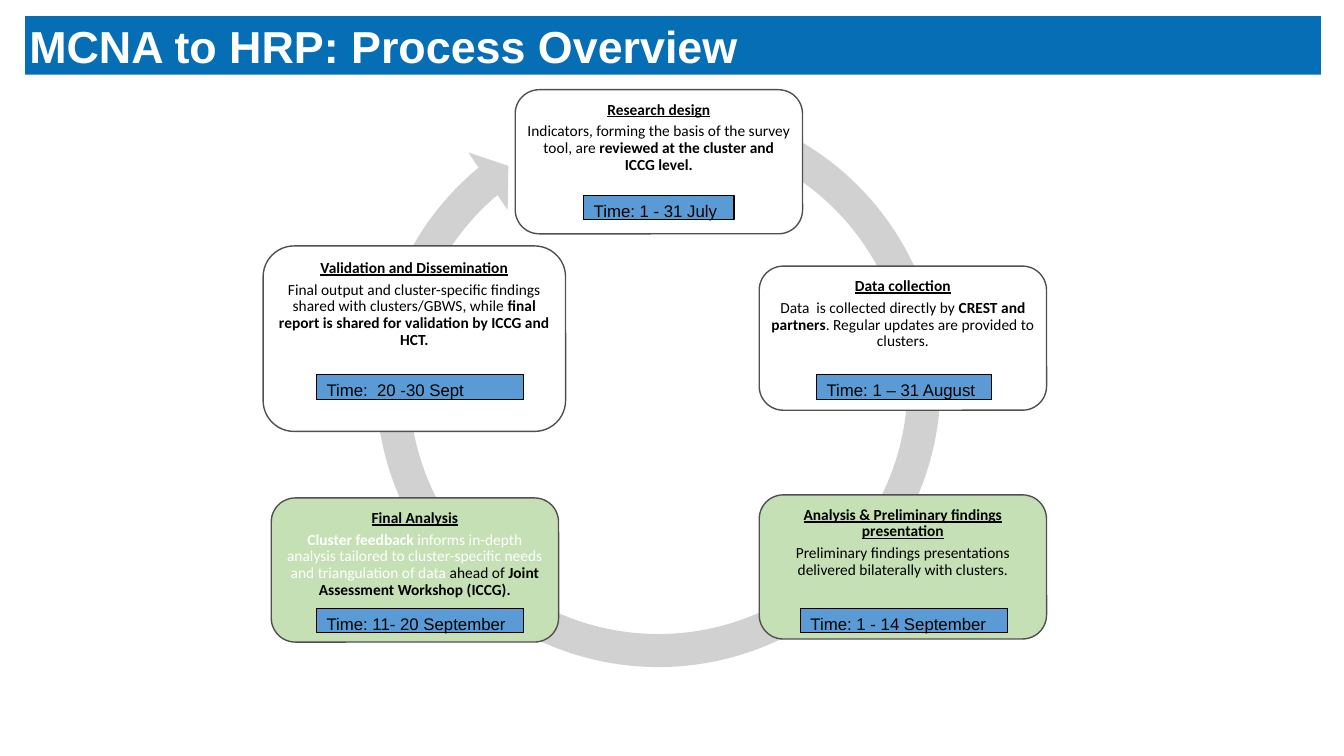
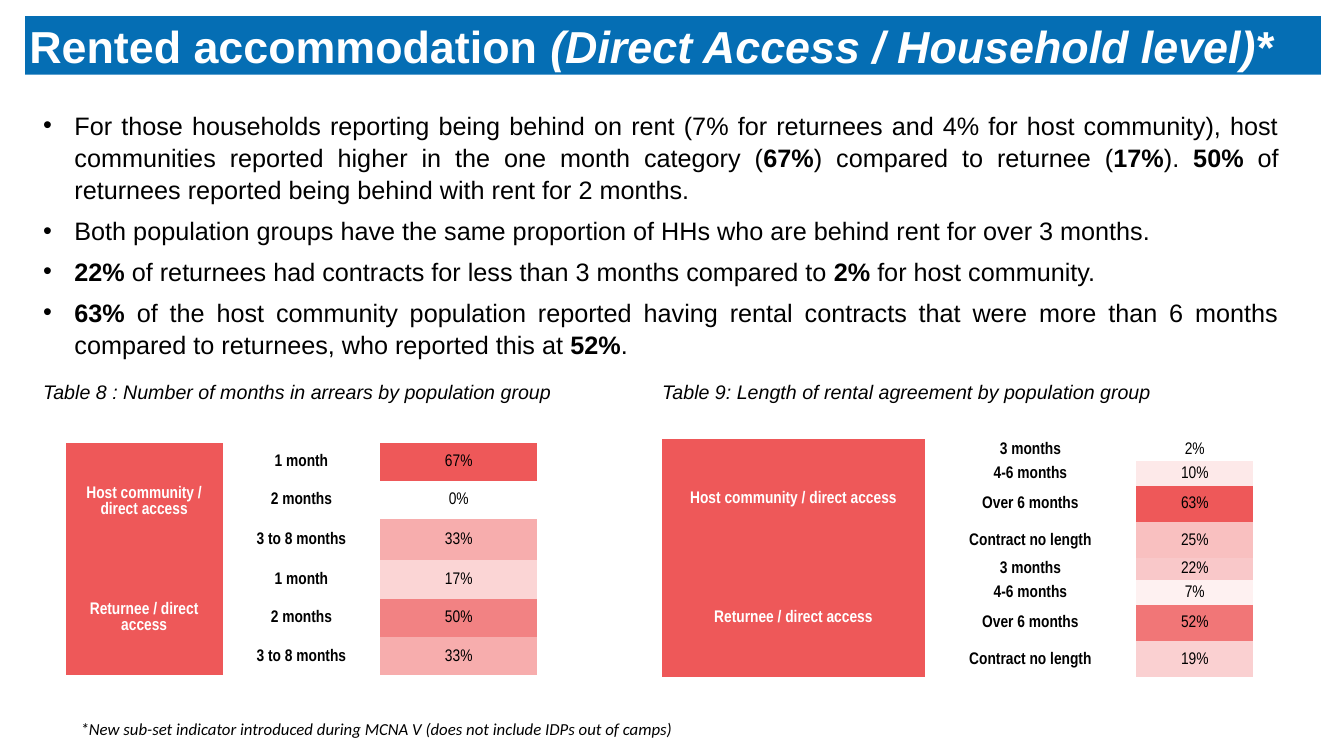
from dataclasses import dataclass

from lxml.etree import SubElement
from pptx import Presentation
from pptx.dml.color import RGBColor
from pptx.enum.shapes import MSO_SHAPE
from pptx.enum.text import MSO_ANCHOR, PP_ALIGN
from pptx.oxml.ns import qn
from pptx.util import Emu, Inches, Pt


@dataclass(frozen=True)
class Theme:
    blue: str = "056EB4"
    time_blue: str = "5B9BD5"
    ring: str = "D1D1D2"
    outline: str = "505052"
    green: str = "C5E0B4"
    red: str = "EE5859"
    white: str = "FFFFFF"
    black: str = "000000"
    sans: str = "Arial"
    narrow: str = "Arial Narrow"
    body: str = "Calibri"
    title_pt: int = 32
    bullet_pt: int = 18
    caption_pt: int = 14
    small_pt: int = 12
    step_pt: int = 11


T = Theme()
WIDTH, HEIGHT = 13.33, 7.5
NO_STYLE_NO_GRID = "{2D5ABB26-0587-4C30-8999-92F81FD0307C}"

# Runs are (text, flags): b bold, i italic, u underlined, w white.
PROCESS_TITLE = [("MCNA to HRP: Process Overview", "b")]
RING = (3.55, 0.84, 5.96, 5.96)
RING_ADJUSTMENTS = (0.055, 3.307, 138.065, 173.674, 0.058)
STEP_SIZE = (2.85, 1.43)
LARGE_STEP_SIZE = (3, 1.84)
TIME_HEIGHT = 0.24
STEPS = [
    dict(heading="Research design", at=(5.11, 0.89), size=STEP_SIZE, fill=T.white,
         text=[("Indicators, forming the basis of the survey tool, are ", ""),
               ("reviewed at the cluster and ICCG level.", "b")],
         time="Time: 1 - 31 July", time_box=(5.79, 1.94, 1.49)),
    dict(heading="Data collection", at=(7.53, 2.64), size=STEP_SIZE, fill=T.white,
         text=[("Data  is collected directly by ", ""), ("CREST and partners", "b"),
               (". Regular updates are provided to clusters.", "")],
         time="Time: 1 – 31 August", time_box=(8.1, 3.72, 1.73)),
    dict(heading="Analysis & Preliminary findings presentation", at=(7.53, 4.91),
         size=STEP_SIZE, fill=T.green,
         text=[("Preliminary findings presentations delivered bilaterally with clusters.", "")],
         time="Time: 1 - 14 September", time_box=(7.94, 6.04, 2.05)),
    dict(heading="Final Analysis", at=(2.69, 4.94), size=STEP_SIZE, fill=T.green,
         text=[("Cluster feedback ", "bw"),
               ("informs in-depth analysis tailored to cluster-specific needs "
                "and triangulation of data ", "w"),
               ("ahead of ", ""), ("Joint Assessment Workshop (ICCG).", "b")],
         time="Time: 11- 20 September", time_box=(3.14, 6.04, 2.05)),
    dict(heading="Validation and Dissemination", at=(2.61, 2.44),
         size=LARGE_STEP_SIZE, fill=T.white,
         text=[("Final output and cluster-specific findings shared with clusters/GBWS, while", ""),
               (" final report is shared for validation by ICCG and HCT.", "b")],
         time="Time:  20 -30 Sept", time_box=(3.14, 3.72, 2.05)),
]

RENT_TITLE = [("Rented accommodation ", "b"), ("(Direct Access / Household level)*", "bi")]
RENT_BULLETS = [
    [("For those households reporting being behind on rent (7% for returnees and 4% for host "
      "community), host communities reported higher in the one month category (", ""),
     ("67%", "b"), (") compared to returnee (", ""), ("17%", "b"), ("). ", ""), ("50%", "b"),
     (" of returnees reported being behind with rent for 2 months.", "")],
    [("Both population groups have the same proportion of HHs who are behind rent "
      "for over 3 months.", "")],
    [("22%", "b"), (" of returnees had contracts for less than 3 months compared to ", ""),
     ("2%", "b"), (" for host community.", "")],
    [("63%", "b"),
     (" of the host community population reported having rental contracts that were more than "
      "6 months compared to returnees, who reported this at ", ""),
     ("52%", "b"), (".", "")],
]
HOST, RETURNEE = "Host community / direct access", "Returnee / direct access"
RENT_TABLES = [
    dict(caption="Table 8 : Number of months in arrears by population group",
         caption_left=0.33, at=(0.65, 4.39), cols=(1.56, 1.56, 1.56), rows=(0.38, 0.38, 0.38),
         labels=("1 month", "2 months", "3 to 8 months"),
         groups={HOST: (67, 0, 33), RETURNEE: (17, 50, 33)}),
    dict(caption="Table 9: Length of rental agreement by population group",
         caption_left=6.47, at=(6.57, 4.36), cols=(2.6, 2.1, 1.16),
         rows=(0.18, 0.25, 0.36, 0.36),
         labels=("3 months", "4-6 months", "Over 6 months", "Contract no length"),
         groups={HOST: (2, 10, 63, 25), RETURNEE: (22, 7, 52, 19)}),
]
FOOTNOTE = "*New sub-set indicator introduced during MCNA V (does not include IDPs out of camps)"


def write(tf, paragraphs, *, size, font=T.sans, color=T.black, align=PP_ALIGN.LEFT,
          line=None, before=None, after=None, indent=None, bullet=None):
    """Fill a text frame; each paragraph is a list of (text, flags) runs."""
    for n, runs in enumerate(paragraphs):
        p = tf.add_paragraph() if n else tf.paragraphs[0]
        p.alignment, p.line_spacing = align, line
        p.space_before = None if before is None else Pt(before)
        p.space_after = None if after is None else Pt(after)
        pPr = p._p.get_or_add_pPr()
        if indent:
            margin, first = indent
            pPr.set("marL", str(Inches(margin)))
            pPr.set("indent", str(Inches(first)))
        if bullet:
            SubElement(pPr, qn("a:buFont"), typeface=T.sans)
            SubElement(pPr, qn("a:buChar"), char=bullet)
        for text, flags in runs:
            r = p.add_run()
            r.text = text
            r.font.name, r.font.size = font, Pt(size)
            r.font.bold, r.font.italic = "b" in flags, "i" in flags
            r.font.underline = "u" in flags
            r.font.color.rgb = RGBColor.from_string(T.white if "w" in flags else color)


def set_insets(box, left, top, right, bottom):
    box.margin_left, box.margin_top = Inches(left), Inches(top)
    box.margin_right, box.margin_bottom = Inches(right), Inches(bottom)


def add_shape(slide, kind, at, fill, line=None, line_pt=1):
    sp = slide.shapes.add_shape(kind, *map(Inches, at))
    sp.shadow.inherit = False
    sp.fill.solid()
    sp.fill.fore_color.rgb = RGBColor.from_string(fill)
    if line:
        sp.line.color.rgb = RGBColor.from_string(line)
        sp.line.width = Pt(line_pt)
    else:
        sp.line.fill.background()
    sp.text_frame.vertical_anchor = MSO_ANCHOR.TOP
    return sp


def add_text(slide, at, paragraphs, **fmt):
    tf = slide.shapes.add_textbox(*map(Inches, at)).text_frame
    tf.word_wrap = True
    write(tf, paragraphs, **fmt)


def add_titled_slide(prs, title):
    slide = prs.slides.add_slide(prs.slide_layouts[6])
    tf = add_shape(slide, MSO_SHAPE.RECTANGLE, (0.25, 0.16, 12.85, 0.58), T.blue).text_frame
    tf.word_wrap = False
    tf.vertical_anchor = MSO_ANCHOR.MIDDLE
    set_insets(tf, 0, 0, 0, 0)
    write(tf, [title], size=T.title_pt, color=T.white, before=8, indent=(0.42, -0.38))
    return slide


def add_step(slide, step):
    card = add_shape(slide, MSO_SHAPE.ROUNDED_RECTANGLE, step["at"] + step["size"],
                     step["fill"], T.outline)
    set_insets(card.text_frame, 0.05, 0.05, 0.05, 0.05)
    write(card.text_frame, [[(step["heading"], "bu")], step["text"]], size=T.step_pt,
          font=T.body, align=PP_ALIGN.CENTER, line=0.9, after=0.35 * T.step_pt)
    time = add_shape(slide, MSO_SHAPE.RECTANGLE, step["time_box"] + (TIME_HEIGHT,),
                     T.time_blue, T.black, 0.75)
    write(time.text_frame, [[(step["time"], "")]], size=T.small_pt)


def heat(value, low, high):
    """Shade from white at the lowest value to red at the highest."""
    share = (value - low) / (high - low)
    return "".join(f"{round(255 - share * (255 - c)):02X}" for c in bytes.fromhex(T.red))


def fill_cell(cell, text, flags="", fill=None):
    cell.vertical_anchor = MSO_ANCHOR.MIDDLE
    set_insets(cell, 0.01, 0.01, 0.01, 0)
    if fill:
        cell.fill.solid()
        cell.fill.fore_color.rgb = RGBColor.from_string(fill)
    else:
        cell.fill.background()
    write(cell.text_frame, [[(text, flags)]], size=T.small_pt, font=T.narrow,
          align=PP_ALIGN.CENTER)


def add_heat_table(slide, spec_):
    labels, groups = spec_["labels"], spec_["groups"]
    heights = spec_["rows"] * len(groups)
    size = sum(spec_["cols"]), sum(heights)
    table = slide.shapes.add_table(len(heights), len(spec_["cols"]),
                                   *map(Inches, spec_["at"] + size)).table
    table.first_row = table.horz_banding = False
    table._tbl.tblPr.find(qn("a:tableStyleId")).text = NO_STYLE_NO_GRID
    for col, width in zip(table.columns, spec_["cols"]):
        col.width = Inches(width)
    for row, height in zip(table.rows, heights):
        row.height = Inches(height)

    values = [v for group in groups.values() for v in group]
    for n, group in enumerate(groups):
        first = n * len(labels)
        table.cell(first, 0).merge(table.cell(first + len(labels) - 1, 0))
        fill_cell(table.cell(first, 0), group, "bw", T.red)
    for n, value in enumerate(values):
        fill_cell(table.cell(n, 1), labels[n % len(labels)], "b")
        fill_cell(table.cell(n, 2), f"{value}%", fill=heat(value, min(values), max(values)))


def build_process(prs):
    slide = add_titled_slide(prs, PROCESS_TITLE)
    ring = add_shape(slide, MSO_SHAPE.CIRCULAR_ARROW, RING, T.ring)
    for n, value in enumerate(RING_ADJUSTMENTS):
        ring.adjustments[n] = value
    for step in STEPS:
        add_step(slide, step)


def build_rent(prs):
    slide = add_titled_slide(prs, RENT_TITLE)
    add_text(slide, (0.33, 1.02, 12.45, 2.7), RENT_BULLETS, size=T.bullet_pt,
             align=PP_ALIGN.JUSTIFY, line=1.07, after=6, indent=(0.31, -0.31), bullet="•")
    for table in RENT_TABLES:
        add_text(slide, (table["caption_left"], 3.72, 5.96, 0.34), [[(table["caption"], "i")]],
                 size=T.caption_pt, align=PP_ALIGN.JUSTIFY)
        add_heat_table(slide, table)
    add_text(slide, (0.7, 7.07, 11.32, 0.31), [[(FOOTNOTE, "i")]], size=T.small_pt,
             font=T.body, align=PP_ALIGN.JUSTIFY, line=1.07, after=6)


def main():
    prs = Presentation()
    prs.slide_width, prs.slide_height = Emu(Inches(WIDTH)), Emu(Inches(HEIGHT))
    build_process(prs)
    build_rent(prs)
    prs.save("out.pptx")


if __name__ == "__main__":
    main()
